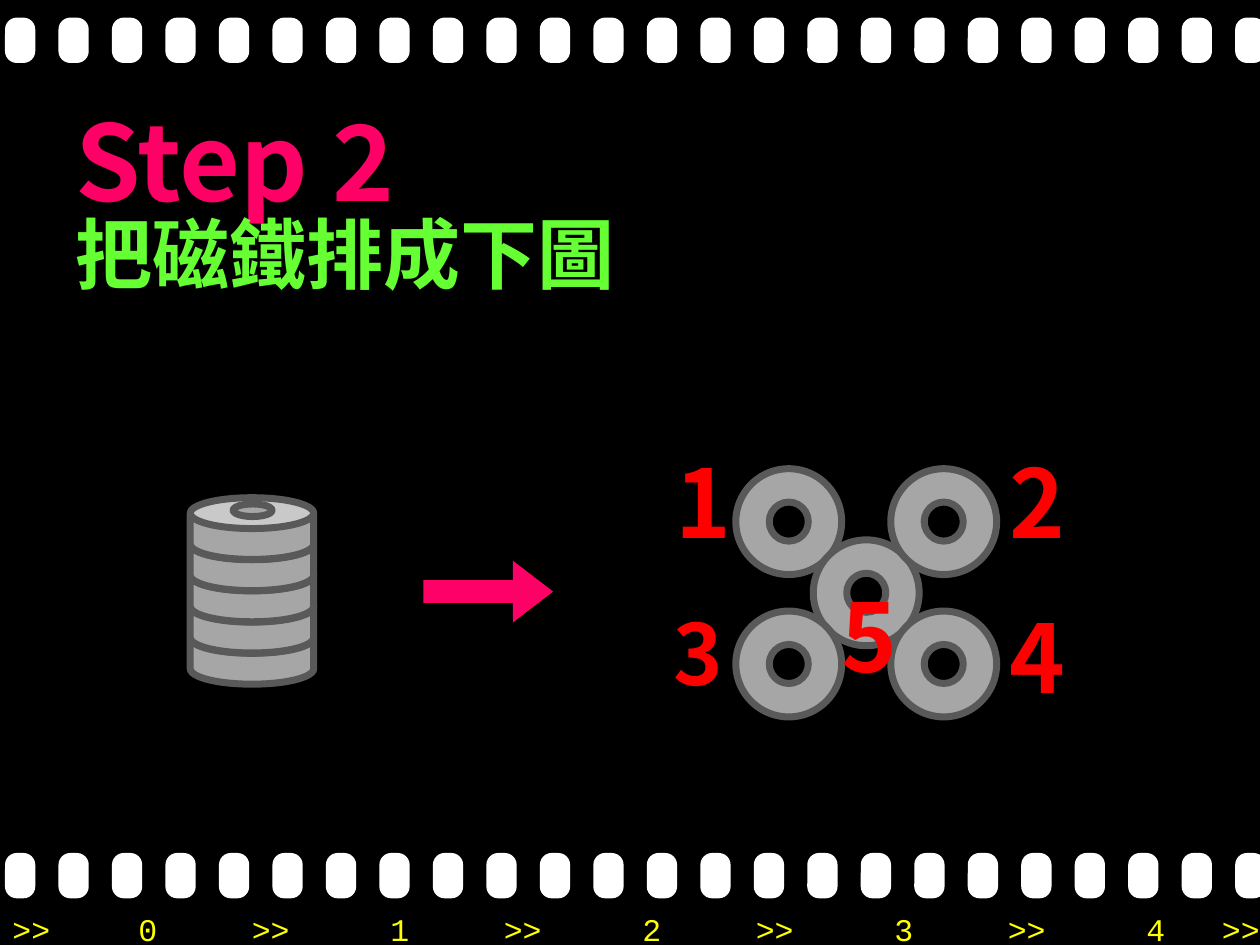
from lxml import etree
from pptx import Presentation
from pptx.dml.color import RGBColor
from pptx.enum.shapes import MSO_SHAPE
from pptx.enum.text import MSO_ANCHOR, PP_ALIGN
from pptx.oxml.ns import qn
from pptx.util import Inches, Pt

ROUNDED, ELLIPSE = MSO_SHAPE.ROUNDED_RECTANGLE, MSO_SHAPE.OVAL
CAN, ARROW = MSO_SHAPE.CAN, MSO_SHAPE.RIGHT_ARROW
TOP, MIDDLE = MSO_ANCHOR.TOP, MSO_ANCHOR.MIDDLE
LEFT, CENTER = PP_ALIGN.LEFT, PP_ALIGN.CENTER

COLORS = {
    "black": "000000", "white": "FFFFFF", "grey": "A6A6A6", "edge": "595959",
    "pink": "FF0066", "green": "66FF33", "red": "FF0000", "yellow": "FFFF00",
}
HEADING_FONT, FRAME_FONT = "Noto Sans CJK SC", "Courier New"
TIGHT = 0.83


def color(name):
    return RGBColor.from_string(COLORS[name])


def add_shape(slide, kind, left, top, width, height, fill, line=None, adjustments=()):
    shape = slide.shapes.add_shape(
        kind, Inches(left), Inches(top), Inches(width), Inches(height))
    shape.shadow.inherit = False
    shape.fill.solid()
    shape.fill.fore_color.rgb = color(fill)
    if line:
        shape.line.color.rgb = color(line)
        shape.line.width = Pt(4)
    else:
        shape.line.fill.background()
    for index, value in enumerate(adjustments):
        shape.adjustments[index] = value
    return shape


def add_text_box(slide, left, top, width, height, **frame_format):
    """Return the first paragraph of a new text box."""
    box = slide.shapes.add_textbox(
        Inches(left), Inches(top), Inches(width), Inches(height))
    for name, value in frame_format.items():
        setattr(box.text_frame, name, value)
    return box.text_frame.paragraphs[0]


def add_run(paragraph, text, size, fill, font=HEADING_FONT, bold=True):
    run = paragraph.add_run()
    run.text = text
    for name, value in {"size": Pt(size), "bold": bold, "name": font}.items():
        setattr(run.font, name, value)
    run.font.color.rgb = color(fill)
    latin = run.font._element.find(qn("a:latin"))
    east_asian = etree.Element(qn("a:ea"), typeface=font)
    latin.addnext(east_asian)


def add_sprocket_holes(slide, left, top, count=24, pitch=0.4245):
    for index in range(count):
        add_shape(slide, ROUNDED, left + index * pitch, top, 0.24, 0.36,
                  "white", adjustments=[0.39])


def add_frame_numbers(slide, left, top, width, height):
    paragraph = add_text_box(slide, left, top, width, height, word_wrap=True)
    properties = paragraph._p.get_or_add_pPr()
    tab_list = etree.SubElement(properties, qn("a:tabLst"))
    stops = [start + 2 * frame for frame in range(5) for start in (1, 1.9)]
    stops[-1] = 9.6
    for stop in stops:
        etree.SubElement(tab_list, qn("a:tab"), pos=str(Inches(stop)), algn="l")
    text = "".join(f">>\t{frame}\t" for frame in range(5)) + ">>"
    add_run(paragraph, text, 18, "yellow", FRAME_FONT, False)


def add_title(slide, left, top, width, height):
    paragraph = add_text_box(slide, left, top, width, height, word_wrap=True,
                             vertical_anchor=MIDDLE, margin_top=Inches(0.18))
    paragraph.alignment = LEFT
    paragraph.line_spacing = TIGHT
    add_run(paragraph, "Step 2", 60, "pink")
    paragraph.add_line_break()
    add_run(paragraph, "把磁鐵排成下圖", 44, "green")


def add_ring(slide, left, top, size=0.84, hole=0.31):
    inset = (size - hole) / 2
    add_shape(slide, ELLIPSE, left, top, size, size, "grey", "edge")
    add_shape(slide, ELLIPSE, left + inset, top + inset, hole, hole, "black", "edge")


def add_ring_pattern(slide, left, top):
    """Lay four rings at the corners, one in the middle, and number them."""
    step_x, step_y = 1.23, 1.13
    for column, row in [(0, 0), (0.5, 0.5), (1, 0), (0, 1), (1, 1)]:
        add_ring(slide, left + 0.59 + column * step_x, top + 0.15 + row * step_y)
    numbers = [("1", 0.01, 0, 54), ("3", 0, 1.23, 48), ("2", 2.66, 0, 54),
               ("4", 2.66, 1.23, 54), ("5", 1.33, 1.06, 54)]
    for number, x, y, size in numbers:
        paragraph = add_text_box(slide, left + x, top + y, 0.58, size / 54,
                                 word_wrap=False, vertical_anchor=TOP,
                                 margin_top=Inches(0.11))
        paragraph.alignment = CENTER
        paragraph.line_spacing = TIGHT
        add_run(paragraph, number, size, "red")


def add_magnet_stack(slide, left, top, count=5, step=0.2475):
    for level in reversed(range(count)):
        add_shape(slide, CAN, left, top + level * step, 0.98, 0.49,
                  "grey", "edge", [0.5])
    add_shape(slide, ELLIPSE, left + 0.34, top + 0.05, 0.31, 0.1, "grey", "edge")


def main():
    presentation = Presentation()
    presentation.slide_width, presentation.slide_height = Inches(10), Inches(7.5)
    slide = presentation.slides.add_slide(presentation.slide_layouts[6])
    slide.background.fill.solid()
    slide.background.fill.fore_color.rgb = color("black")

    for top in (6.77, 0.14):
        add_sprocket_holes(slide, 0.04, top)
    add_frame_numbers(slide, 0, 7.17, 10.2, 0.4)
    add_title(slide, 0.5, 0.6, 9, 1.97)
    add_ring_pattern(slide, 5.25, 3.57)
    add_magnet_stack(slide, 1.51, 3.95)
    add_shape(slide, ARROW, 3.36, 4.45, 1.03, 0.49, "pink", adjustments=[0.37, 0.65])
    presentation.save("out.pptx")


if __name__ == "__main__":
    main()
